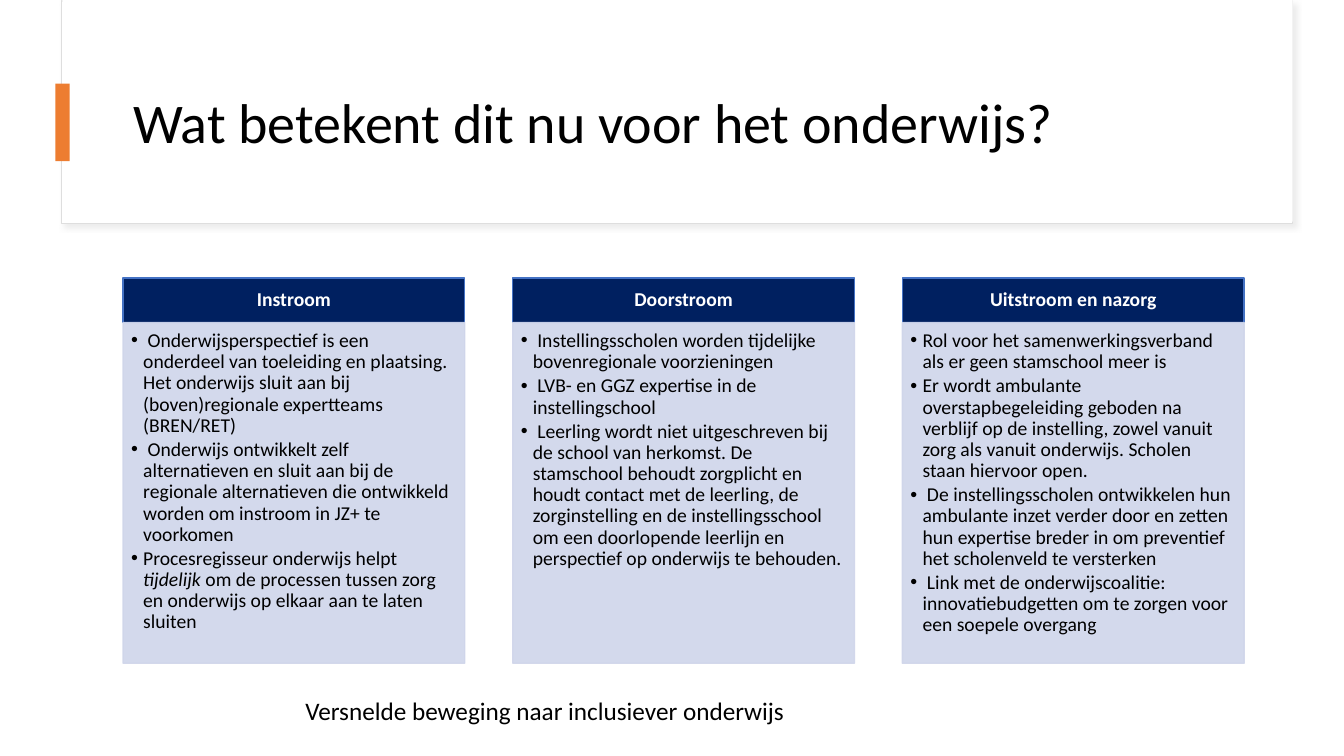
from lxml.etree import SubElement
from pptx import Presentation
from pptx.dml.color import RGBColor
from pptx.enum.shapes import MSO_SHAPE as Shape
from pptx.enum.text import MSO_ANCHOR as Anchor, PP_ALIGN as Align
from pptx.oxml.ns import qn
from pptx.util import Inches, Pt

COLORS = {
    "white": "FFFFFF",
    "black": "000000",
    "frame": "DEDEDE",
    "shadow": "D9D9D9",
    "accent": "ED7D31",
    "header": "002060",
    "header_line": "4472C4",
    "card": "CFD5EA",
}

COLUMNS = [
    ("Instroom", [
        " Onderwijsperspectief is een onderdeel van toeleiding en plaatsing. Het onderwijs sluit aan bij "
        "(boven)regionale expertteams (BREN/RET)",
        " Onderwijs ontwikkelt zelf alternatieven en sluit aan bij de regionale alternatieven die ontwikkeld "
        "worden om instroom in JZ+ te voorkomen",
        "Procesregisseur onderwijs helpt *tijdelijk* om de processen tussen zorg en onderwijs op elkaar aan "
        "te laten sluiten",
    ]),
    ("Doorstroom", [
        " Instellingsscholen worden tijdelijke bovenregionale voorzieningen",
        " LVB- en GGZ expertise in de instellingschool",
        " Leerling wordt niet uitgeschreven bij de school van herkomst. De stamschool behoudt zorgplicht en "
        "houdt contact met de leerling, de zorginstelling en de instellingsschool om een doorlopende "
        "leerlijn en perspectief op onderwijs te behouden.",
    ]),
    ("Uitstroom en nazorg", [
        "Rol voor het samenwerkingsverband als er geen stamschool meer is",
        "Er wordt ambulante overstapbegeleiding geboden na verblijf op de instelling, zowel vanuit zorg als "
        "vanuit onderwijs. Scholen staan hiervoor open.",
        " De instellingsscholen ontwikkelen hun ambulante inzet verder door en zetten hun expertise breder "
        "in om preventief het scholenveld te versterken",
        " Link met de onderwijscoalitie: innovatiebudgetten om te zorgen voor een soepele overgang",
    ]),
]


class SlideBuilder:
    font = "Calibri"
    line_spacing = 0.9

    def __init__(self, slide):
        self.slide = slide

    def rect(self, left, top, width, height, fill, line=None, line_width=1, alpha=None):
        box = self.slide.shapes.add_shape(
            Shape.RECTANGLE, Inches(left), Inches(top), Inches(width), Inches(height))
        box.shadow.inherit = False
        box.fill.solid()
        box.fill.fore_color.rgb = RGBColor.from_string(COLORS[fill])
        if line:
            box.line.color.rgb = RGBColor.from_string(COLORS[line])
            box.line.width = Pt(line_width)
        else:
            box.line.fill.background()
        if alpha:
            for color in box.element.spPr.iter(qn("a:srgbClr")):
                SubElement(color, qn("a:alpha"), val=str(alpha * 1000))
        return box

    def cast_shadow(self, box):
        effects = box.element.spPr.find(qn("a:effectLst"))
        shadow = SubElement(effects, qn("a:outerShdw"), blurRad=str(Pt(4)), dist=str(Pt(3)),
                            dir=str(45 * 60000), algn="tl", rotWithShape="0")
        color = SubElement(shadow, qn("a:srgbClr"), val=COLORS["shadow"])
        SubElement(color, qn("a:alpha"), val="50000")

    def style(self, paragraph, size, color="black", bold=False, align=Align.LEFT):
        paragraph.alignment = align
        for run in paragraph.runs:
            run.font.name = self.font
            run.font.size = Pt(size)
            run.font.bold = bold
            run.font.color.rgb = RGBColor.from_string(COLORS[color])

    def insets(self, frame, left, top, right, bottom):
        frame.word_wrap = True
        frame.margin_left, frame.margin_top = Inches(left), Inches(top)
        frame.margin_right, frame.margin_bottom = Inches(right), Inches(bottom)

    def title(self, text, left, top, width, height):
        title = self.slide.shapes.title
        title.left, title.top = Inches(left), Inches(top)
        title.width, title.height = Inches(width), Inches(height)
        title.text_frame.text = text
        title.text_frame.vertical_anchor = Anchor.MIDDLE
        heading = title.text_frame.paragraphs[0]
        heading.line_spacing = self.line_spacing
        self.style(heading, 40)
        title.element.getparent().append(title.element)

    def header(self, text, left, top, width, height):
        frame = self.rect(left, top, width, height, "header", "header_line").text_frame
        self.insets(frame, 0.11, 0.06, 0.11, 0.06)
        frame.vertical_anchor = Anchor.MIDDLE
        frame.text = text
        frame.paragraphs[0].line_spacing = self.line_spacing
        self.style(frame.paragraphs[0], 14, "white", bold=True, align=Align.CENTER)

    def bullet_card(self, items, left, top, width, height):
        frame = self.rect(left, top, width, height, "card", "card", alpha=90).text_frame
        self.insets(frame, 0.08, 0.08, 0.11, 0.12)
        frame.vertical_anchor = Anchor.TOP
        for index, item in enumerate(items):
            paragraph = frame.add_paragraph() if index else frame.paragraphs[0]
            for part, words in enumerate(item.split("*")):
                run = paragraph.add_run()
                run.text = words
                run.font.italic = part % 2 == 1
            paragraph.line_spacing = self.line_spacing
            paragraph.space_after = Pt(2.1)
            self.style(paragraph, 14)
            properties = paragraph._p.get_or_add_pPr()
            properties.set("marL", str(Inches(0.12)))
            properties.set("indent", str(Inches(-0.12)))
            SubElement(properties, qn("a:buFont"), typeface="Arial")
            SubElement(properties, qn("a:buChar"), char="•")

    def note(self, text, left, top, width, height):
        frame = self.slide.shapes.add_textbox(
            Inches(left), Inches(top), Inches(width), Inches(height)).text_frame
        frame.word_wrap = True
        frame.text = text
        self.style(frame.paragraphs[0], 18)


def main():
    deck = Presentation()
    deck.slide_width, deck.slide_height = Inches(13.33), Inches(7.5)
    builder = SlideBuilder(deck.slides.add_slide(deck.slide_layouts[5]))

    title_frame = builder.rect(0.61, 0.01, 12.21, 2.21, "white", "frame", 0.75)
    builder.cast_shadow(title_frame)
    builder.rect(0.62, 0, 12.2, 2.2, "white")
    builder.title("Wat betekent dit nu voor het onderwijs?", 1.22, 0.6, 11.12, 1.29)
    builder.rect(0.55, 0.83, 0.14, 0.77, "accent")

    first_left, pitch, width = 1.22, 3.865, 3.39
    for index, (heading, items) in enumerate(COLUMNS):
        left = first_left + index * pitch
        builder.header(heading, left, 2.76, width, 0.44)
        builder.bullet_card(items, left, 3.2, width, 3.38)

    builder.note("Versnelde beweging naar inclusiever onderwijs", 2.93, 6.85, 5.94, 0.4)
    deck.save("out.pptx")


if __name__ == "__main__":
    main()
